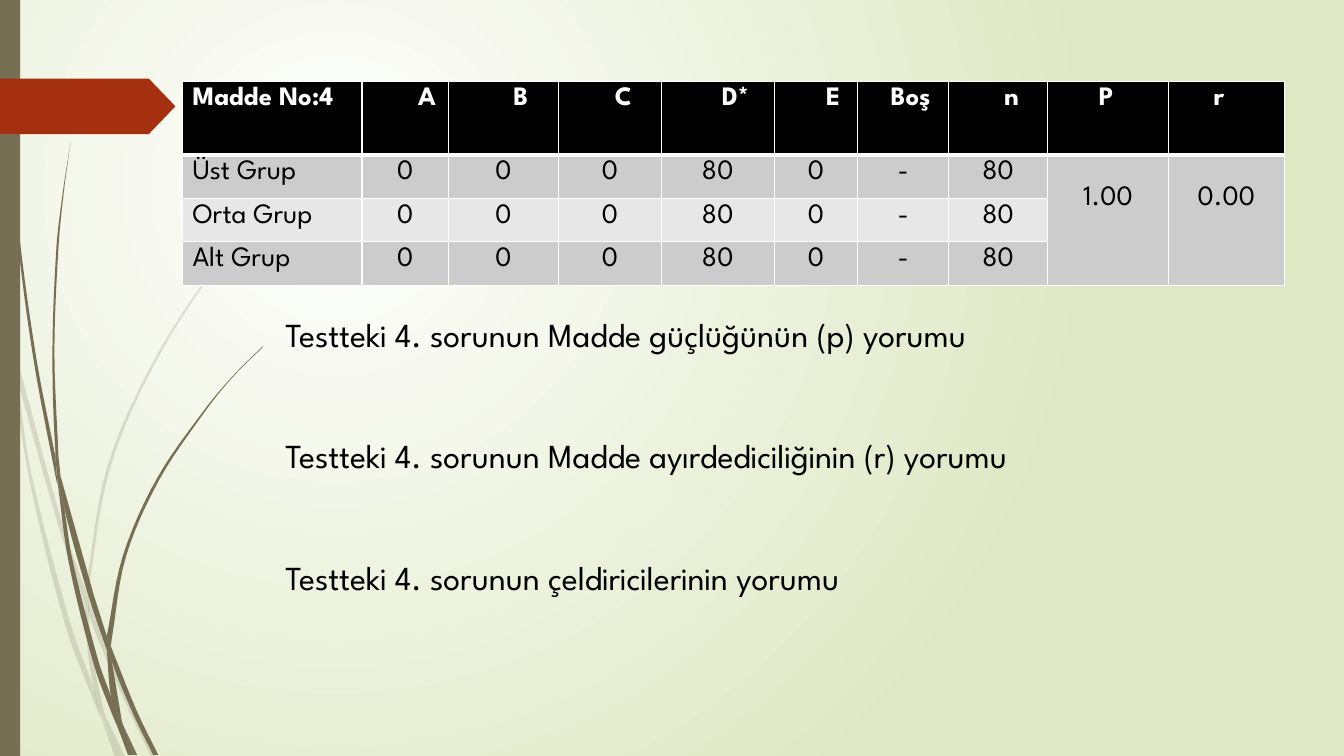
from lxml import etree
from pptx import Presentation
from pptx.dml.color import RGBColor
from pptx.enum.lang import MSO_LANGUAGE_ID
from pptx.enum.shapes import MSO_SHAPE
from pptx.enum.text import MSO_ANCHOR, MSO_AUTO_SIZE, PP_ALIGN
from pptx.oxml.ns import qn
from pptx.util import Inches, Pt

RECTANGLE = MSO_SHAPE.RECTANGLE
PENTAGON = MSO_SHAPE.PENTAGON
LEFT, CENTER = PP_ALIGN.LEFT, PP_ALIGN.CENTER
TOP = MSO_ANCHOR.TOP
NO_AUTOFIT = MSO_AUTO_SIZE.NONE
TURKISH = MSO_LANGUAGE_ID.TURKISH

FONT = "League Spartan"
OLIVE, RUST, BLACK, WHITE = "766F54", "A53010", "000000", "FFFFFF"
PALE_GREEN, BAND_DARK, BAND_LIGHT = "DFE8C4", "CCCCCC", "E7E7E7"

# Each piece of grass: one edge, then the opposite edge back (inches)
FAINT_GRASS = [
    ([(0.11, 3.5), (0.09, 3.22), (0, 2.82)], [(0, 2.99), (0.1, 3.44)]),
    ([(0.17, 3.76), (0.58, 5.22), (0.84, 5.99)], [(0.85, 5.86), (0.62, 5.2), (0.14, 3.45)]),
    ([(0.88, 5.96), (0.88, 6.1), (1.23, 6.94), (1.5, 7.51)],
     [(1.55, 7.51), (1.27, 6.92), (0.92, 6.07)]),
    ([(1.19, 7.51), (1.24, 7.51)], [(1.05, 7.11)]),
    ([(0.11, 3.5), (0.28, 4.7), (0.65, 6.21), (0.92, 6.93), (1.01, 7.14)],
     [(0.99, 7.07), (0.93, 6.83), (0.7, 6.19), (0.31, 4.69), (0.17, 3.76)]),
    ([(0.84, 5.99), (0.87, 6.46), (0.93, 6.83), (0.96, 6.92), (1.05, 7.11)],
     [(1.03, 7.06), (0.91, 6.46), (0.88, 6.1)]),
    ([(3.12, 1.53), (2.89, 1.75), (2.68, 1.97), (2.28, 2.44), (1.58, 3.48),
      (1.07, 4.61), (0.85, 5.84)],
     [(0.88, 5.96), (0.88, 5.84), (1.1, 4.62), (1.6, 3.49), (2.29, 2.45),
      (2.68, 1.98), (2.9, 1.75), (3.12, 1.54)]),
    ([(1.01, 7.14), (1.14, 7.51)], [(1.19, 7.51)]),
    ([(0.88, 6.1), (0.88, 5.96), (0.85, 5.86)], [(0.84, 5.99), (0.88, 6.08)]),
    ([(0.93, 6.83), (0.99, 7.07), (1.19, 7.51)], [(1.05, 7.11), (0.96, 6.92)]),
]
DARK_GRASS = [
    ([(0.03, 0), (0.04, 0.48), (0.07, 1.1), (0.17, 2.33), (0.33, 3.55),
      (0.56, 4.77), (0.57, 4.81)],
     [(0.55, 4.53), (0.36, 3.55), (0.19, 2.32), (0.08, 1.09), (0.05, 0.48), (0.04, 0)]),
    ([(0.6, 4.72), (0.64, 5.05), (0.88, 5.92), (1.06, 6.45)], [(1.06, 6.31), (0.93, 5.9)]),
    ([(1.1, 6.41), (1.11, 6.56), (1.32, 7.08), (1.52, 7.49)],
     [(1.57, 7.49), (1.36, 7.06), (1.13, 6.49)]),
    ([(0.57, 4.77), (0.68, 5.57), (0.93, 6.59), (1.11, 7.08), (1.17, 7.22)],
     [(1.16, 7.17), (1.1, 6.91), (0.98, 6.57), (0.72, 5.56), (0.64, 5.05)]),
    ([(0.7, 1.41), (0.62, 1.93), (0.56, 2.45), (0.52, 3.49), (0.55, 4.49), (0.6, 4.72)],
     [(0.58, 4.53), (0.54, 3.49), (0.58, 2.45), (0.63, 1.93), (0.7, 1.41)]),
    ([(1.33, 7.49), (1.36, 7.49)], [(1.22, 7.19)]),
    ([(0.57, 4.77), (0.64, 5.05)], [(0.6, 4.72), (0.55, 4.49), (0.55, 4.53)]),
    ([(2.6, 3.44), (2.31, 3.73), (2.04, 4.05), (1.56, 4.74), (1.22, 5.51), (1.06, 6.31)],
     [(1.1, 6.41), (1.11, 6.33), (1.25, 5.52), (1.58, 4.76), (2.05, 4.06),
      (2.31, 3.74), (2.61, 3.44)]),
    ([(1.17, 7.22), (1.27, 7.49)], [(1.31, 7.49)]),
    ([(1.06, 6.45), (1.1, 6.91), (1.16, 7.06), (1.22, 7.19)], [(1.21, 7.16), (1.11, 6.56)]),
    ([(1.06, 6.45), (1.11, 6.56)], [(1.1, 6.41), (1.06, 6.31)]),
    ([(1.1, 6.91), (1.17, 7.22), (1.3, 7.49)], [(1.33, 7.49), (1.22, 7.19), (1.16, 7.06)]),
]

# Width, header label, alignment and extra left indent of each table column
COLUMNS = [
    (1.78, "Madde No:4", LEFT, 0), (0.86, "A", CENTER, 0.43),
    (1.09, "B", CENTER, 0.34), (1.02, "C", CENTER, 0.27),
    (1.12, "D*", CENTER, 0.35), (0.83, "E", CENTER, 0.34),
    (0.9, "Boş", CENTER, 0.14), (0.98, "n", CENTER, 0.27),
    (1.2, "P", LEFT, 0.41), (1.15, "r", LEFT, 0.35),
]
GROUPS = ["Üst Grup", "Orta Grup", "Alt Grup"]
GROUP_VALUES = ["0", "0", "0", "80", "0", "-", "80"]
ITEM_INDICES = ["1.00", "0.00"]
HEADER_HEIGHT, ROW_HEIGHT = 0.73, 0.43

QUESTIONS = [
    "Testteki 4. sorunun Madde güçlüğünün (p) yorumu",
    "Testteki 4. sorunun Madde ayırdediciliğinin (r) yorumu",
    "Testteki 4. sorunun çeldiricilerinin yorumu",
]


def rgb(value):
    return RGBColor.from_string(value)


def paint(shape, color, opacity=100):
    shape.shadow.inherit = False
    shape.fill.solid()
    shape.fill.fore_color.rgb = rgb(color)
    shape.line.fill.background()
    if opacity < 100:
        color_node = shape.fill._xPr.find(qn("a:solidFill"))[0]
        etree.SubElement(color_node, qn("a:alpha"), val=str(opacity * 1000))


def smooth(points, steps=6):
    """Curve through the points, with tangents weighted by distance."""
    knots = [complex(*point) for point in points]
    last = len(knots) - 1
    lengths = [abs(end - start) for start, end in zip(knots, knots[1:])]
    curve, slopes = [knots[0]], []
    for index in range(last + 1 if last else 0):
        before, after = max(index - 1, 0), min(index + 1, last)
        slopes.append((knots[after] - knots[before]) / sum(lengths[before:after]))
    for index, length in enumerate(lengths):
        start, end = knots[index], knots[index + 1]
        for step in range(1, steps + 1):
            t = step / steps
            blend = t * t * (3 - 2 * t)
            curve.append(start + (end - start) * blend
                         + length * t * (1 - t)
                         * ((1 - t) * slopes[index] - t * slopes[index + 1]))
    return [(Inches(point.real), Inches(point.imag)) for point in curve]


def add_background(slide):
    fill = slide.background.fill
    fill.gradient()
    for stop, color, position in zip(fill.gradient_stops, (WHITE, PALE_GREEN), (0, 1)):
        stop.color.rgb = rgb(color)
        stop.position = position
    gradient = fill._xPr.find(qn("a:gradFill"))
    linear = gradient.find(qn("a:lin"))
    radial = etree.Element(qn("a:path"), {"path": "circle"})
    etree.SubElement(radial, qn("a:fillToRect"), l="50000", t="50000",
                     r="100000", b="100000")
    gradient.replace(linear, radial)


def add_decoration(slide, height):
    # Grass
    for pieces, opacity in ((FAINT_GRASS, 20), (DARK_GRASS, 100)):
        for edge, opposite_edge in pieces:
            outline = smooth(edge) + smooth(opposite_edge)
            builder = slide.shapes.build_freeform(*outline[0])
            builder.add_line_segments(outline[1:], close=True)
            paint(builder.convert_to_shape(), OLIVE, opacity)
    # Side bar and arrow tag
    bar = slide.shapes.add_shape(RECTANGLE, 0, 0, Inches(0.2), height)
    paint(bar, OLIVE)
    tag = slide.shapes.add_shape(PENTAGON, 0, Inches(0.78), Inches(1.74), Inches(0.55))
    tag.adjustments[0] = 0.48
    paint(tag, RUST)


def set_borders(cell, bottom_width):
    properties = cell._tc.get_or_add_tcPr()
    widths = (("a:lnL", 1), ("a:lnR", 1), ("a:lnT", 1), ("a:lnB", bottom_width))
    for index, (tag, width) in enumerate(widths):
        line = etree.Element(qn(tag), w=str(Pt(width)))
        solid = etree.SubElement(line, qn("a:solidFill"))
        etree.SubElement(solid, qn("a:srgbClr"), val=WHITE)
        properties.insert(index, line)


def style_cell(cell, text, fill, alignment, header=False):
    cell.text = text
    cell.fill.solid()
    cell.fill.fore_color.rgb = rgb(fill)
    set_borders(cell, 3 if header else 1)
    paragraph = cell.text_frame.paragraphs[0]
    paragraph.alignment = alignment
    font = paragraph.font
    font.name, font.bold = FONT, header
    font.size = Pt(19 if header else 20)
    font.color.rgb = rgb(WHITE if header else BLACK)


def add_item_table(slide, left, top, width, height):
    frame = slide.shapes.add_table(len(GROUPS) + 1, len(COLUMNS), left, top, width, height)
    table = frame.table
    for index, row in enumerate(table.rows):
        row.height = Inches(ROW_HEIGHT if index else HEADER_HEIGHT)
    # Header
    for index, (column_width, label, alignment, indent) in enumerate(COLUMNS):
        table.columns[index].width = Inches(column_width)
        cell = table.cell(0, index)
        style_cell(cell, label, BLACK, alignment, header=True)
        cell.margin_left = Inches(0.1 + indent)
    # Group rows; the last two columns span all of them
    for row, group in enumerate(GROUPS, start=1):
        values = [group] + GROUP_VALUES + (ITEM_INDICES if row == 1 else ["", ""])
        for column, value in enumerate(values):
            style_cell(table.cell(row, column), value,
                       BAND_DARK if row % 2 else BAND_LIGHT, CENTER if column else LEFT)
    for column in range(len(COLUMNS) - len(ITEM_INDICES), len(COLUMNS)):
        cell = table.cell(1, column)
        cell.merge(table.cell(len(GROUPS), column))
        cell.margin_top = Inches(0.3)


def add_questions(slide, left, top, width, height):
    body = slide.placeholders[1]
    body.left, body.top, body.width, body.height = left, top, width, height
    frame = body.text_frame
    frame.text = "\n".join(QUESTIONS)
    frame.word_wrap, frame.auto_size = True, NO_AUTOFIT
    frame.vertical_anchor = TOP
    for paragraph in frame.paragraphs:
        paragraph.space_before, paragraph.space_after = Pt(7), Pt(51)
        paragraph.font.name, paragraph.font.size = FONT, Pt(24)
        paragraph.font.color.rgb = rgb(BLACK)
        paragraph.runs[0].font.language_id = TURKISH
        properties = paragraph._p.get_or_add_pPr()
        properties.set("marL", "0")
        properties.set("indent", "0")
        properties.insert_element_before(
            etree.Element(qn("a:buNone")), "a:tabLst", "a:defRPr", "a:extLst")


def main():
    presentation = Presentation()
    presentation.slide_width, presentation.slide_height = Inches(13.33), Inches(7.5)
    slide = presentation.slides.add_slide(presentation.slide_layouts[1])
    title = slide.shapes.title.element
    title.getparent().remove(title)
    add_background(slide)
    add_decoration(slide, presentation.slide_height)
    add_item_table(slide, Inches(1.81), Inches(0.81), Inches(10.94), Inches(2.03))
    add_questions(slide, Inches(2.73), Inches(3.06), Inches(9.9), Inches(3.33))
    presentation.save("out.pptx")


if __name__ == "__main__":
    main()
